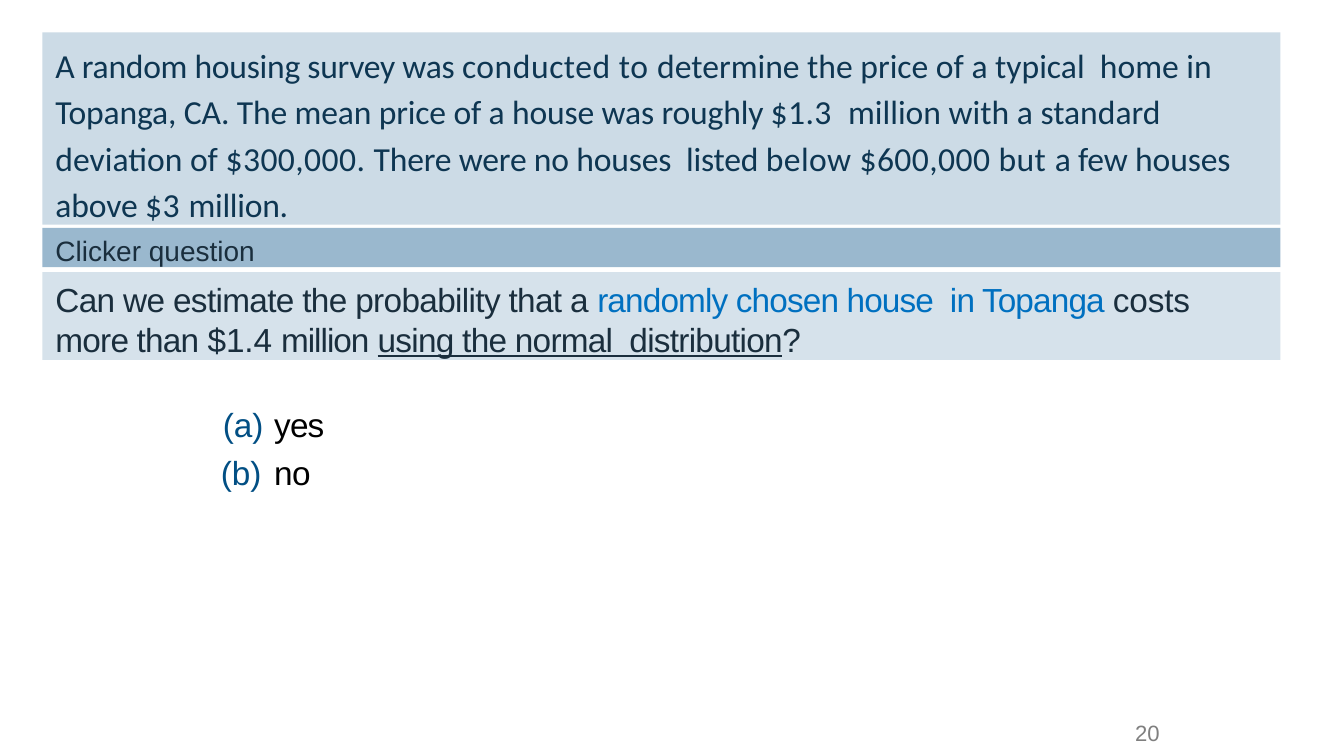
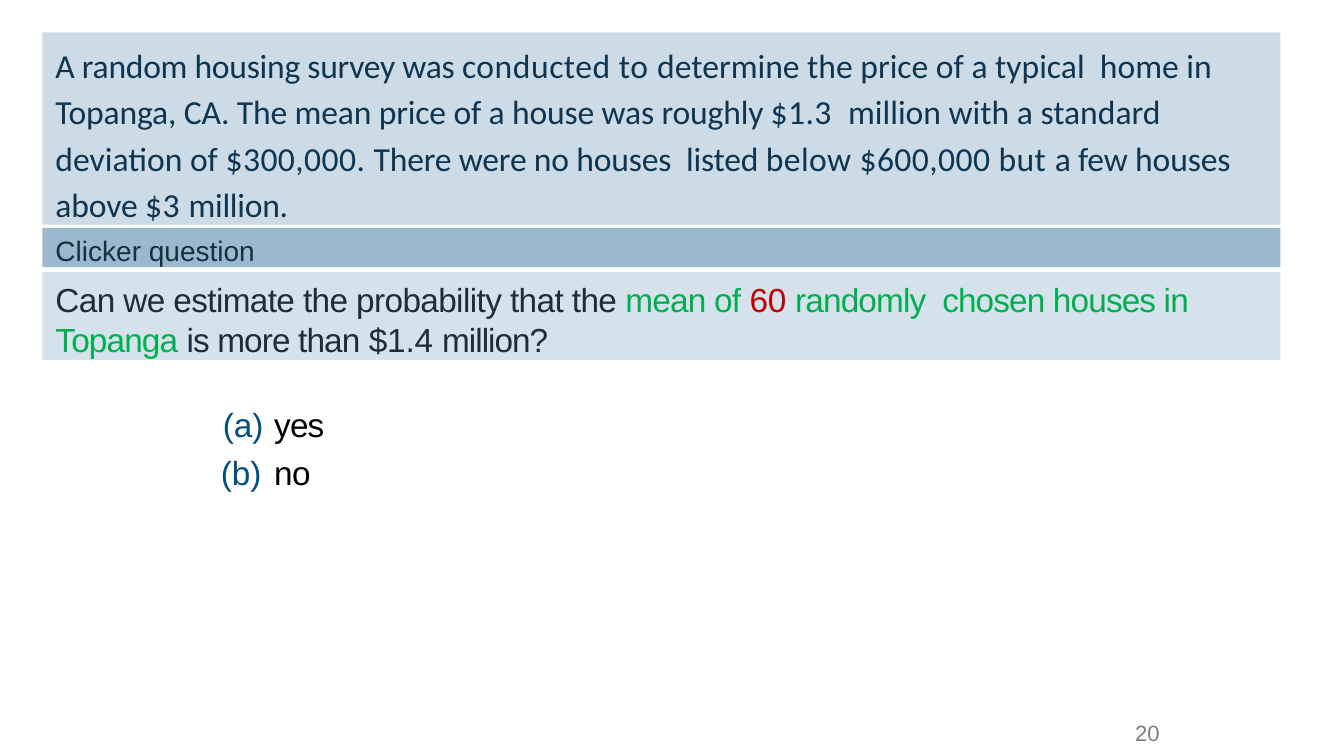
from lxml import etree
from pptx import Presentation
from pptx.dml.color import RGBColor
from pptx.enum.shapes import MSO_SHAPE
from pptx.enum.text import MSO_ANCHOR, MSO_AUTO_SIZE, PP_ALIGN
from pptx.oxml.ns import qn
from pptx.util import Inches, Pt

RECTANGLE = MSO_SHAPE.RECTANGLE
TOP, MIDDLE = MSO_ANCHOR.TOP, MSO_ANCHOR.MIDDLE
LEFT = PP_ALIGN.LEFT
NO_AUTOFIT = MSO_AUTO_SIZE.NONE

SURVEY = [
    ("A random housing survey was ", -0.2),
    ("conducted to ", 0.4),
    ("determine the price of a typical  home in ", 0),
    ("Topanga, CA. The mean price of a house was roughly ", -0.1),
    ("$1.3  ", 0.3),
    ("million with a standard deviation of ", 0),
    ("$300,000. ", 0.3),
    ("There were no houses  listed ", -0.15),
    ("below $600,000 but ", 0.3),
    ("a few houses above ", -0.1),
    ("$3 ", 0.4),
    ("million.", -0.2),
]
HEADING = [("Clicker question", 0)]
ANSWERS = [("yes", -0.6, 8, 0.51), ("no", -0.4, 6, 0.53)]
PAGE_NUMBER = [("20", -0.1)]
QUESTIONS = [
    [
        ("Can we estimate the probability that a ", -0.45),
        ("randomly chosen house  in Topanga ", -0.6, "house"),
        ("costs ", -0.1),
        ("more than ", -0.55),
        ("$1.4 ", -0.1),
        ("million ", -0.7),
        ("using the normal  distribution", -0.5, "underline"),
        ("?", -0.4),
    ],
    [
        ("Can we estimate the probability that the ", -0.43),
        ("mean of ", -0.55, "sample"),
        ("60 ", -0.2, "count"),
        ("randomly  chosen houses in Topanga ", -0.6, "sample"),
        ("is more than ", -0.6),
        ("$1.4 ", -0.1),
        ("million?", -0.7),
    ],
]

THEME = {
    "survey": {"fill": "CCDBE6", "color": "0E3652", "size": 24, "name": "Calibri"},
    "heading": {"fill": "9AB8CE", "color": "1A2E3D", "size": 20, "name": "Arial"},
    "question": {"fill": "D6E2EB", "color": "1A2E3D", "size": 23.8, "name": "Arial"},
    "answer": {"color": "000000", "size": 23.8, "name": "Arial"},
    "number": {"color": "7F7F7F", "size": 15.8, "name": "Arial"},
    "marker": "024F84",
    "accents": {
        "house": {"color": "0070C0"},
        "sample": {"color": "00B050"},
        "count": {"color": "C00000"},
        "underline": {"underline": True},
    },
}

WIDTH, HEIGHT = 13.33, 7.5
BAND_LEFT, BAND_WIDTH = 0.42, 12.28
BANDS = {"survey": (0.32, 1.91), "heading": (2.26, 0.39), "question": (2.7, 0.87)}
ANSWER_AREA = (2.17, 3.9, 1.07, 1)
ANSWER_INDENT = 0.55
NUMBER_AREA = (11.23, 7.12, 0.3, 0.28)


def place(box, area):
    for side, length in zip(("left", "top", "width", "height"), area):
        setattr(box, side, Inches(length))


def set_frame(box, left=0, top=0, right=0, anchor=TOP):
    frame = box.text_frame
    formats = {
        "word_wrap": True,
        "auto_size": NO_AUTOFIT,
        "vertical_anchor": anchor,
        "margin_left": Inches(left),
        "margin_top": Inches(top),
        "margin_right": Inches(right),
        "margin_bottom": 0,
    }
    for key, value in formats.items():
        setattr(frame, key, value)
    return frame


def write(para, spans, style, before, line_spacing=1.0):
    for key, value in {
        "alignment": LEFT,
        "line_spacing": line_spacing,
        "space_before": Pt(before),
    }.items():
        setattr(para, key, value)
    for text, spacing, *accent in spans:
        look = dict(THEME[style])
        for name in accent:
            look.update(THEME["accents"][name])
        span = para.add_run()
        span.text = text
        formats = {
            "name": look["name"],
            "size": Pt(look["size"]),
            "underline": look.get("underline"),
        }
        for key, value in formats.items():
            setattr(span.font, key, value)
        span.font.color.rgb = RGBColor.from_string(look["color"])
        span._r.get_or_add_rPr().set("spc", str(round(spacing * 100)))


def add_band(page, style, spans, inset, before, line_spacing=1.0):
    top, height = BANDS[style]
    area = (BAND_LEFT, top, BAND_WIDTH, height)
    if style == "survey":
        box = page.shapes.title
        place(box, area)
    else:
        box = page.shapes.add_shape(RECTANGLE, *map(Inches, area))
        box.shadow.inherit = False
    box.fill.solid()
    box.fill.fore_color.rgb = RGBColor.from_string(THEME[style]["fill"])
    box.line.fill.background()
    anchor = MIDDLE if style == "survey" else TOP
    frame = set_frame(box, 0.13, inset, 0.2, anchor)
    write(frame.paragraphs[0], spans, style, before, line_spacing)


def add_marker(para, hanging):
    properties = para._p.get_or_add_pPr()
    properties.set("marL", str(Inches(ANSWER_INDENT)))
    properties.set("indent", str(-Inches(hanging)))
    color = etree.SubElement(properties, qn("a:buClr"))
    etree.SubElement(color, qn("a:srgbClr"), val=THEME["marker"])
    etree.SubElement(properties, qn("a:buAutoNum"), type="alphaLcParenBoth")


def add_answers(page):
    box = page.shapes.add_textbox(*map(Inches, ANSWER_AREA))
    frame = set_frame(box, top=0.11)
    for index, (text, spacing, before, hanging) in enumerate(ANSWERS):
        para = frame.add_paragraph() if index else frame.paragraphs[0]
        write(para, [(text, spacing)], "answer", before)
        add_marker(para, hanging)


def add_number(page):
    box = page.shapes.add_textbox(*map(Inches, NUMBER_AREA))
    frame = set_frame(box, left=0.03, top=0.02)
    write(frame.paragraphs[0], PAGE_NUMBER, "number", 1.1)


def main():
    deck = Presentation()
    deck.slide_width, deck.slide_height = Inches(WIDTH), Inches(HEIGHT)
    title_only = deck.slide_layouts.get_by_name("Title Only")
    for question in QUESTIONS:
        page = deck.slides.add_slide(title_only)
        add_band(page, "survey", SURVEY, 0.06, 4, 1.15)
        add_band(page, "heading", HEADING, 0.06, 4)
        add_band(page, "question", question, 0.07, 4.8)
        add_answers(page)
        add_number(page)
    deck.save("out.pptx")


if __name__ == "__main__":
    main()
